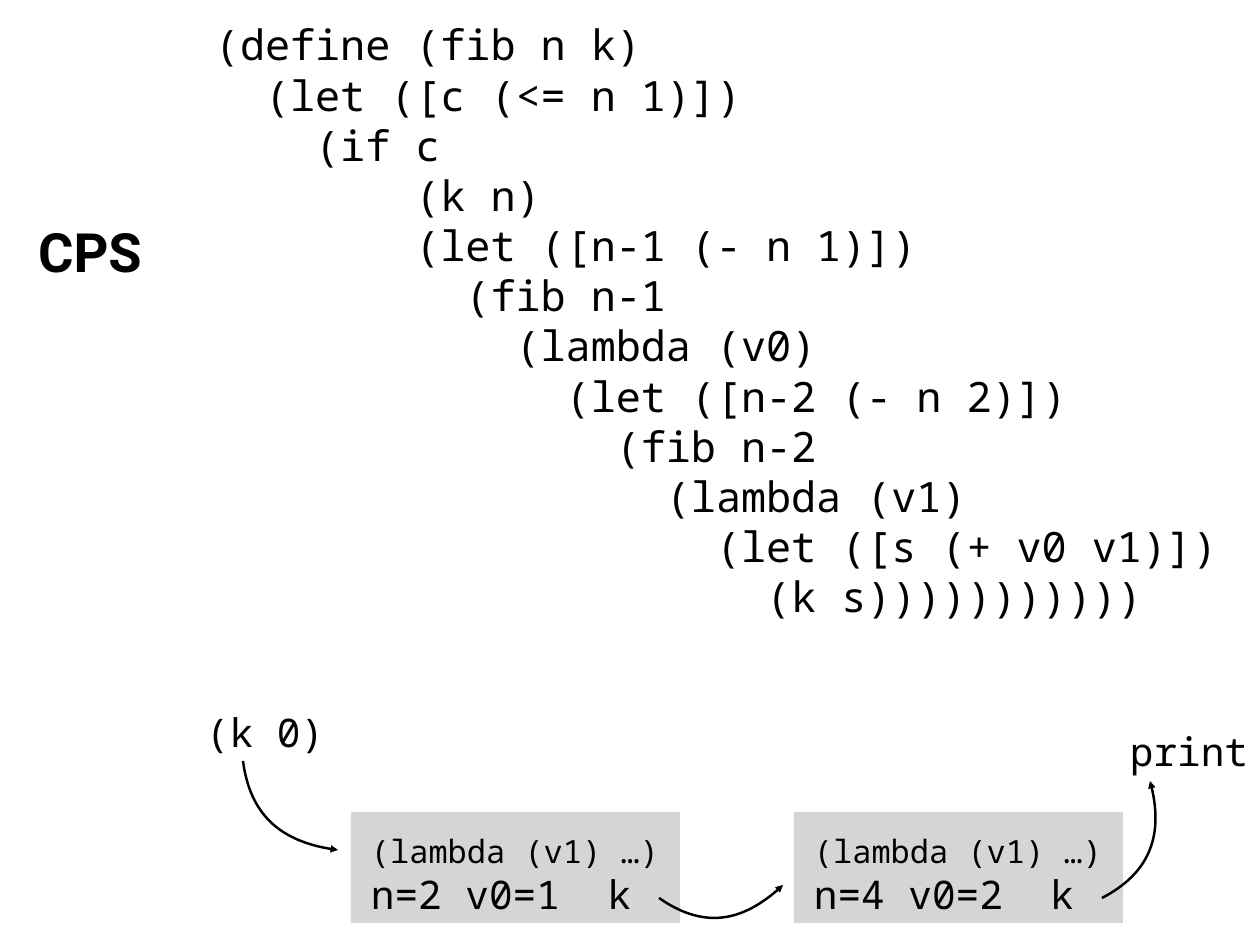
from pptx import Presentation
from pptx.dml.color import RGBColor
from pptx.enum.shapes import MSO_SHAPE
from pptx.enum.text import MSO_ANCHOR, MSO_AUTO_SIZE, PP_ALIGN
from pptx.oxml.ns import qn
from pptx.util import Pt
from lxml.etree import SubElement

PX = 10320
COLORS = {"ink": "000000", "closure": "D6D5D5"}
MONO = "Noto Sans Mono"

CODE = """(define (fib n k)
  (let ([c (<= n 1)])
    (if c
        (k n)
        (let ([n-1 (- n 1)])
          (fib n-1
            (lambda (v0)
              (let ([n-2 (- n 2)])
                (fib n-2
                  (lambda (v1)
                    (let ([s (+ v0 v1)])
                      (k s)))))))))))""".split("\n")
TITLE = "CPS"
CALLS = [("(k 0)", (201, 705, 129, 54)), ("print", (1125, 724, 129, 54))]
CLOSURE_HEAD = "(lambda (v1) …)"
CLOSURES = ["n=2 v0=1  k", "n=4 v0=2  k"]
CLOSURE_LEFT, CLOSURE_TOP, CLOSURE_STEP = 351, 812, 443
ARROWS = [
    [(243, 761), (250, 814), (282, 843), (338, 850)],
    [(659, 898), (702, 928), (743, 923), (783, 885)],
    [(1102, 898), (1148, 874), (1165, 835), (1150, 781)],
]


def emu(lengths):
    return [length * PX for length in lengths]


def color(name):
    return RGBColor.from_string(COLORS[name])


def write(holder, lines, sizes, font=MONO, bold=False, align=PP_ALIGN.LEFT,
          anchor=MSO_ANCHOR.TOP, wrap=False):
    frame = holder.text_frame
    frame.word_wrap = wrap
    frame.auto_size = MSO_AUTO_SIZE.NONE
    frame.vertical_anchor = anchor
    frame.margin_left = frame.margin_right = 5 * PX
    frame.margin_top = frame.margin_bottom = 5 * PX
    for index, (line, size) in enumerate(zip(lines, sizes)):
        paragraph = frame.add_paragraph() if index else frame.paragraphs[0]
        paragraph.alignment = align
        run = paragraph.add_run()
        run.text = line
        run.font.name = font
        run.font.size = Pt(size)
        run.font.bold = bold
        run.font.color.rgb = color("ink")


def curve_point(corners, t):
    weights = ((1 - t) ** 3, 3 * t * (1 - t) ** 2, 3 * t ** 2 * (1 - t), t ** 3)
    return tuple(round(sum(w * c[axis] for w, c in zip(weights, corners)) * PX)
                 for axis in (0, 1))


def draw_arrow(slide, corners):
    points = [curve_point(corners, step / 40) for step in range(41)]
    builder = slide.shapes.build_freeform(*points[0])
    builder.add_line_segments(points[1:], close=False)
    arrow = builder.convert_to_shape()
    arrow.shadow.inherit = False
    arrow.fill.background()
    arrow.line.color.rgb = color("ink")
    arrow.line.width = Pt(2)
    SubElement(arrow.line._get_or_add_ln(), qn("a:tailEnd"), type="triangle")
    outline = next(arrow._element.iter(qn("a:path")))
    for segment in outline.findall(qn("a:lnTo")):
        outline.remove(segment)
    bend = SubElement(outline, qn("a:cubicBezTo"))
    for x, y in corners[1:]:
        SubElement(bend, qn("a:pt"), x=str(x * PX - arrow.left), y=str(y * PX - arrow.top))


def main():
    deck = Presentation()
    deck.slide_width, deck.slide_height = emu((1260, 945))
    slide = deck.slides.add_slide(deck.slide_layouts[5])
    shapes = slide.shapes

    title = shapes.title
    title.left, title.top, title.width, title.height = emu((29, 214, 122, 74))
    write(title, [TITLE], [44], font="Roboto", bold=True,
          align=PP_ALIGN.CENTER, anchor=MSO_ANCHOR.MIDDLE)

    listing = shapes.add_textbox(*emu((210, 14, 1026, 571)))
    write(listing, CODE, [34] * len(CODE), wrap=True)

    for call, place in CALLS:
        write(shapes.add_textbox(*emu(place)), [call], [32], anchor=MSO_ANCHOR.MIDDLE)

    for index, bindings in enumerate(CLOSURES):
        left = CLOSURE_LEFT + index * CLOSURE_STEP
        closure = shapes.add_shape(MSO_SHAPE.RECTANGLE, *emu((left, CLOSURE_TOP, 329, 111)))
        closure.shadow.inherit = False
        closure.fill.solid()
        closure.fill.fore_color.rgb = color("closure")
        closure.line.fill.background()
        body = shapes.add_textbox(*emu((left + 15, CLOSURE_TOP + 15, 318, 91)))
        write(body, [CLOSURE_HEAD, bindings], [26, 32])

    for corners in ARROWS:
        draw_arrow(slide, corners)

    deck.save("out.pptx")


if __name__ == "__main__":
    main()
